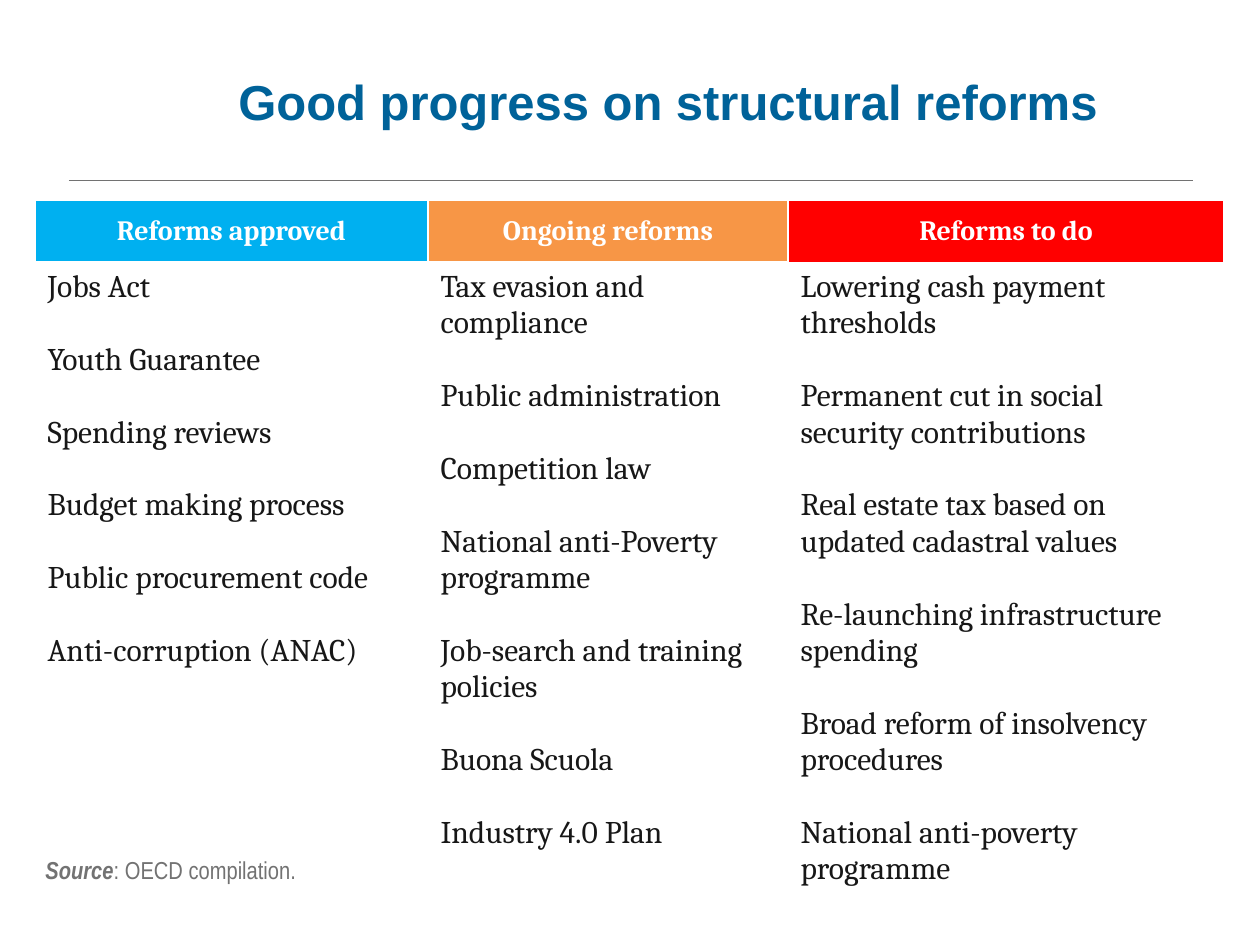
from lxml import etree
from pptx import Presentation
from pptx import util as u
from pptx.dml.color import RGBColor
from pptx.enum import shapes, text
from pptx.oxml.ns import qn

PX = 914400 // 126
COLORS = {"title": "006299", "grey": "727272", "body": "171717", "white": "FFFFFF",
          "approved": "00B0F0", "ongoing": "F79646", "to_do": "FF0000"}
TITLE = "Good progress on structural reforms"
SOURCE = [("Source", True), (": OECD compilation.", False)]
COLUMNS = [
    ("Reforms approved", "approved", 393, 3,
     ["Jobs Act", "Youth Guarantee", "Spending reviews", "Budget making process",
      "Public procurement code", "Anti-corruption (ANAC)"]),
    ("Ongoing reforms", "ongoing", 360, 3,
     ["Tax evasion and compliance", "Public administration", "Competition law",
      "National anti-Poverty programme", "Job-search and training policies",
      "Buona Scuola", "Industry 4.0 Plan"]),
    ("Reforms to do", "to_do", 436, 0,
     ["Lowering cash payment thresholds",
      "Permanent cut in social security contributions",
      "Real estate tax based on updated cadastral values",
      "Re-launching infrastructure spending",
      "Broad reform of insolvency procedures",
      "National anti-poverty programme"]),
]
ROW_HEIGHTS = [63, 609]
ITEM_GAP = 20.8


def px(*lengths):
    return [length * PX for length in lengths]


def color(name):
    return RGBColor.from_string(COLORS[name])


def style(font, name, size, color_name, bold=False):
    font.name, font.size, font.bold = name, u.Pt(size), bold
    font.color.rgb = color(color_name)


def set_borders(cell, widths):
    properties = cell._tc.get_or_add_tcPr()
    position = 0
    for side, width in zip("LRTB", widths):
        if width:
            line = etree.Element(qn("a:ln" + side), w=str(u.Pt(width)))
            fill = etree.SubElement(line, qn("a:solidFill"))
            etree.SubElement(fill, qn("a:srgbClr"), val=COLORS["white"])
            properties.insert(position, line)
            position += 1


def add_title(slide):
    title = slide.shapes.title
    title.left, title.top, title.width, title.height = px(105, 26, 1126, 149)
    title.text_frame.text = TITLE
    title.text_frame.vertical_anchor = text.MSO_ANCHOR.MIDDLE
    paragraph = title.text_frame.paragraphs[0]
    paragraph.alignment = text.PP_ALIGN.CENTER
    style(paragraph.font, "Arial", 28, "title", True)


def add_rule(slide):
    rule = slide.shapes.add_connector(shapes.MSO_CONNECTOR.STRAIGHT, *px(69, 180, 1193, 180))
    rule.line.color.rgb = color("grey")
    rule.line.width = u.Pt(0.5)
    etree.SubElement(rule._element.spPr, qn("a:effectLst"))


def add_source(slide):
    frame = slide.shapes.add_textbox(*px(33, 849, 964, 72)).text_frame
    frame.word_wrap = True
    paragraph = frame.paragraphs[0]
    for words, emphasis in SOURCE:
        run = paragraph.add_run()
        run.text = words
        style(run.font, "Arial Narrow", 14, "grey", emphasis)
        run.font.italic = emphasis


def add_reforms(slide):
    width = sum(column[2] for column in COLUMNS)
    table = slide.shapes.add_table(
        2, len(COLUMNS), *px(35, 200, width, sum(ROW_HEIGHTS))).table
    table.horz_banding = False
    for row, height in zip(table.rows, ROW_HEIGHTS):
        row.height = height * PX
    for index, (heading, fill, width, bottom, items) in enumerate(COLUMNS):
        table.columns[index].width = width * PX
        header, body = table.cell(0, index), table.cell(1, index)
        header.text = heading
        header.vertical_anchor = text.MSO_ANCHOR.MIDDLE
        header.fill.solid()
        header.fill.fore_color.rgb = color(fill)
        set_borders(header, (1, 1, 1, bottom))
        paragraph = header.text_frame.paragraphs[0]
        paragraph.alignment = text.PP_ALIGN.CENTER
        style(paragraph.font, "Cambria", 16, "white", True)

        body.text = "\n".join(items)
        body.fill.background()
        for position, paragraph in enumerate(body.text_frame.paragraphs):
            if position:
                paragraph.space_before = u.Pt(ITEM_GAP)
            style(paragraph.font, "Cambria", 18, "body")


def main():
    presentation = Presentation()
    presentation.slide_width, presentation.slide_height = px(1260, 945)
    slide = presentation.slides.add_slide(presentation.slide_layouts[5])
    add_rule(slide)
    add_title(slide)
    add_source(slide)
    add_reforms(slide)
    presentation.save("out.pptx")


if __name__ == "__main__":
    main()
